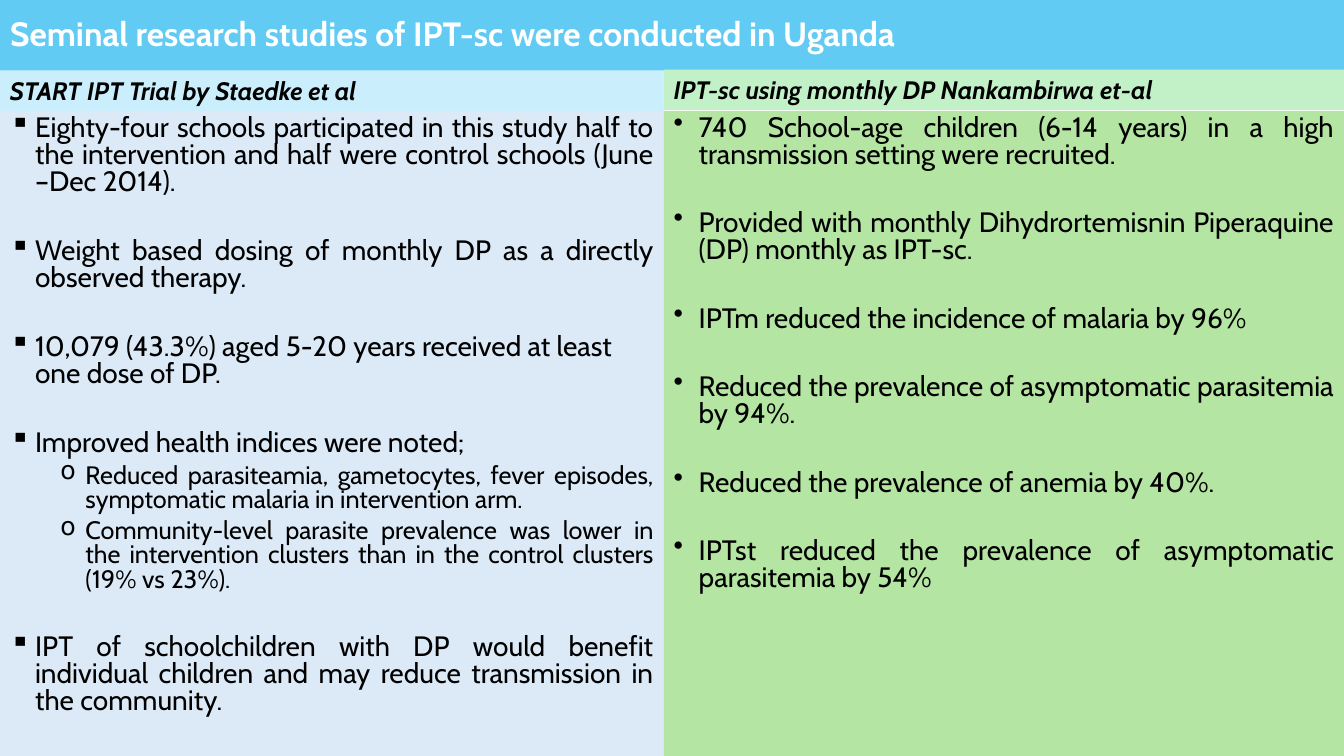
from pptx import Presentation
from pptx.dml.color import RGBColor
from pptx.enum.text import MSO_ANCHOR, MSO_AUTO_SIZE, PP_ALIGN
from pptx.oxml.ns import qn
from pptx.util import Pt
from lxml import etree

FONT = "Cabin"
COLORS = {
    "title": "61CBF4", "white": "FFFFFF", "black": "000000",
    "start_head": "CAEEFB", "start_body": "DCEAF7",
    "monthly_head": "C2F1C8", "monthly_body": "B4E5A2",
}
SLIDE_W, SLIDE_H = 960, 540
TITLE_H, HEAD_H = 50.4, 28.8
LEFT_W = 474
INDENT = 18

# Each item: level, text, justified
START_ITEMS = [
    (0, "Eighty-four schools participated in this study half to the intervention "
        "and half were control schools (June –Dec 2014).", True),
    (0, "Weight based dosing of monthly DP as a directly observed therapy.", True),
    (0, "10,079 (43.3%) aged 5-20 years received at least one dose of DP.", False),
    (0, "Improved health indices were noted;", False),
    (1, "Reduced parasiteamia, gametocytes, fever episodes, symptomatic malaria "
        "in intervention arm.", True),
    (1, "Community-level parasite prevalence was lower in the intervention clusters "
        "than in the control clusters (19% vs 23%).", True),
    (0, "IPT of schoolchildren with DP would benefit individual children and may "
        "reduce transmission in the community.", True),
]
MONTHLY_ITEMS = [(0, text, True) for text in (
    "740 School-age children (6-14 years) in a high transmission setting were recruited.",
    "Provided with monthly Dihydrortemisnin Piperaquine (DP) monthly as IPT-sc.",
    "IPTm reduced the incidence of malaria by 96%",
    "Reduced the prevalence of asymptomatic parasitemia by 94%.",
    "Reduced the prevalence of anemia by 40%.",
    "IPTst reduced the prevalence of asymptomatic parasitemia by 54%",
)]


def rgb(name):
    return RGBColor.from_string(COLORS[name])


def fill_box(sp, color, anchor=MSO_ANCHOR.TOP):
    sp.fill.solid()
    sp.fill.fore_color.rgb = rgb(color)
    tf = sp.text_frame
    tf.word_wrap = True
    tf.auto_size = MSO_AUTO_SIZE.NONE
    tf.vertical_anchor = anchor
    return tf


def style_runs(p, size, color="black", bold=False, italic=False):
    for r in p.runs:
        r.font.name = FONT
        r.font.size = Pt(size)
        r.font.bold = bold
        r.font.italic = italic
        r.font.color.rgb = rgb(color)


def add_bullet(p, char, level):
    pPr = p._p.get_or_add_pPr()
    pPr.set("marL", str(Pt(INDENT * (1 + 2 * level))))
    pPr.set("indent", str(Pt(-INDENT)))
    etree.SubElement(pPr, qn("a:buChar")).set("char", char)


def add_title(slide, left, top, width, height):
    sp = slide.shapes.title
    sp.left, sp.top, sp.width, sp.height = map(Pt, (left, top, width, height))
    tf = fill_box(sp, "title", MSO_ANCHOR.MIDDLE)
    tf.text = "Seminal research studies of IPT-sc were conducted in Uganda"
    p = tf.paragraphs[0]
    p.alignment = PP_ALIGN.LEFT
    p.line_spacing = 0.9
    style_runs(p, 24, "white", bold=True)


def add_study(slide, left, top, width, height, study, heading, items,
              bullet, gap, head_lift=0):
    # Bulleted findings
    box = slide.shapes.add_textbox(Pt(left), Pt(top + HEAD_H),
                                   Pt(width), Pt(height - HEAD_H))
    tf = fill_box(box, f"{study}_body")
    for i, (level, text, justified) in enumerate(items):
        p = tf.add_paragraph() if i else tf.paragraphs[0]
        p.text = text
        p.level = level
        add_bullet(p, "o" if level else bullet, level)
        p.alignment = PP_ALIGN.JUSTIFY if justified else PP_ALIGN.LEFT
        p.line_spacing = 0.8
        if i:
            p.space_before = Pt(5 if level else gap)
        style_runs(p, 18 if level else 20)

    # Heading strip
    head = slide.shapes.add_textbox(Pt(left), Pt(top - head_lift),
                                    Pt(width), Pt(HEAD_H))
    tf = fill_box(head, f"{study}_head")
    tf.text = heading
    style_runs(tf.paragraphs[0], 18, bold=True, italic=True)


def main():
    prs = Presentation()
    prs.slide_width, prs.slide_height = Pt(SLIDE_W), Pt(SLIDE_H)
    slide = prs.slides.add_slide(prs.slide_layouts[5])
    add_title(slide, 0, 0, SLIDE_W, TITLE_H)
    study_h = SLIDE_H - TITLE_H
    add_study(slide, 0, TITLE_H, LEFT_W, study_h, "start",
              "START IPT Trial by Staedke et al", START_ITEMS, "▪", 30.2)
    add_study(slide, LEFT_W, TITLE_H, SLIDE_W - LEFT_W, study_h, "monthly",
              "IPT-sc using monthly DP Nankambirwa et-al", MONTHLY_ITEMS,
              "•", 29.7, head_lift=0.7)
    prs.save("out.pptx")


if __name__ == "__main__":
    main()
